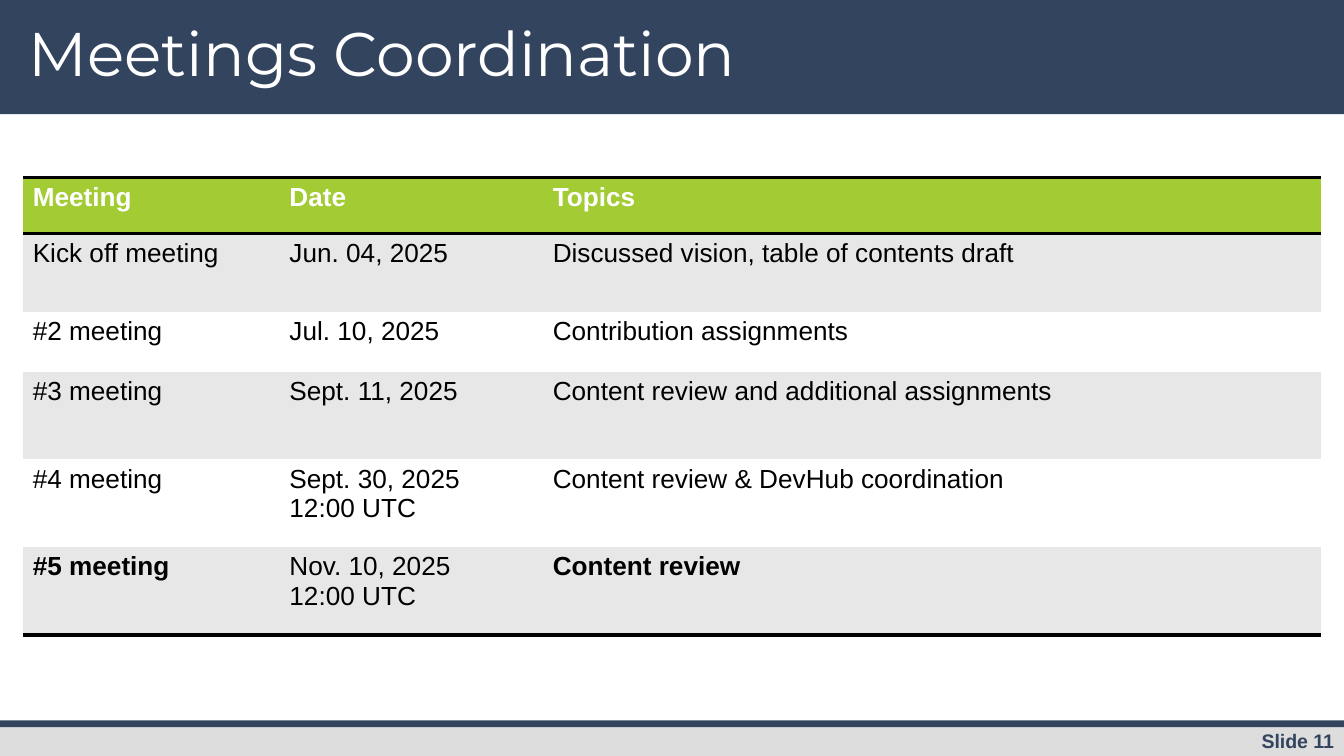
from lxml.etree import SubElement
from pptx import Presentation
from pptx.dml.color import RGBColor
from pptx.enum.shapes import MSO_SHAPE as Shape
from pptx.enum.text import MSO_ANCHOR as Anchor, PP_ALIGN as Align
from pptx.oxml import parse_xml
from pptx.oxml.ns import qn
from pptx.util import Pt

NAVY, SILVER, GREEN = "33445F", "DDDDDD", "A3CB34"
STRIPE, WHITE, BLACK = "E7E7E7", "FFFFFF", "000000"
NO_GRID_STYLE = "{2D5ABB26-0587-4C30-8999-92F81FD0307C}"
DRAWING_NS = "http://schemas.openxmlformats.org/drawingml/2006/main"
COLUMN_WIDTHS = [137.5, 141.1, 416.9]
ROW_HEIGHTS = [30, 42, 32.2, 47, 47, 47]
MEETINGS = [
    ("Meeting", "Date", "Topics"),
    ("Kick off meeting", "Jun. 04, 2025", "Discussed vision, table of contents draft"),
    ("#2 meeting", "Jul. 10, 2025", "Contribution assignments"),
    ("#3 meeting", "Sept. 11, 2025", "Content review and additional assignments"),
    ("#4 meeting", "Sept. 30, 2025\n12:00 UTC", "Content review & DevHub coordination"),
    ("#5 meeting", "Nov. 10, 2025\n12:00 UTC", "Content review"),
]


def color(value):
    return RGBColor.from_string(value)


def add_span(para, text, size, ink, bold=False, face="Arial"):
    span = para.add_run()
    span.text = text
    span.font.name = face
    span.font.size = Pt(size)
    span.font.bold = bold
    span.font.color.rgb = color(ink)


def set_insets(frame):
    frame.word_wrap = True
    frame.vertical_anchor = Anchor.TOP
    frame.margin_left = frame.margin_right = Pt(5.3)
    frame.margin_top = frame.margin_bottom = Pt(2.6)


def add_bar(page, top, height, fill):
    bar = page.shapes.add_shape(Shape.RECTANGLE, 0, Pt(top), Pt(720), Pt(height))
    bar.shadow.inherit = False
    bar.fill.solid()
    bar.fill.fore_color.rgb = color(fill)
    bar.line.fill.background()


def add_slide_number(page):
    box = page.shapes.add_textbox(Pt(606.2), Pt(388.1), Pt(113.8), Pt(18))
    set_insets(box.text_frame)
    para = box.text_frame.paragraphs[0]
    para.alignment = Align.RIGHT
    add_span(para, "Slide 11", 10.5, NAVY, bold=True)


def place_title(page, text):
    title = page.shapes.title
    title.left, title.top, title.width, title.height = Pt(10.1), Pt(10.1), Pt(554.4), Pt(46.1)
    set_insets(title.text_frame)
    para = title.text_frame.paragraphs[0]
    para.alignment = Align.LEFT
    para.line_spacing = 0.9
    add_span(para, text, 33, WHITE, face="Montserrat")
    page.shapes.element.append(title.element)


def add_border(cell, side):
    line = parse_xml(f'<a:{side} xmlns:a="{DRAWING_NS}" w="{Pt(2)}"/>')
    fill = SubElement(line, qn("a:solidFill"))
    SubElement(fill, qn("a:srgbClr"), val=BLACK)
    cell._tc.get_or_add_tcPr().insert(0, line)


def fill_cell(cell, text, fill, ink, bold):
    cell.fill.solid()
    cell.fill.fore_color.rgb = color(fill)
    cell.margin_left = cell.margin_right = Pt(5.4)
    cell.margin_top = cell.margin_bottom = Pt(2.7)
    for number, line in enumerate(text.split("\n")):
        frame = cell.text_frame
        para = frame.add_paragraph() if number else frame.paragraphs[0]
        add_span(para, line, 14, ink, bold)


def add_meeting_table(page):
    frame = page.shapes.add_table(
        len(MEETINGS), len(COLUMN_WIDTHS), Pt(12.2), Pt(95),
        Pt(sum(COLUMN_WIDTHS)), Pt(sum(ROW_HEIGHTS)),
    )
    table = frame.table
    table._tbl.tblPr.find(qn("a:tableStyleId")).text = NO_GRID_STYLE
    for column, width in zip(table.columns, COLUMN_WIDTHS):
        column.width = Pt(width)
    last = len(MEETINGS) - 1
    for row, (height, texts) in enumerate(zip(ROW_HEIGHTS, MEETINGS)):
        table.rows[row].height = Pt(height)
        fill = GREEN if row == 0 else STRIPE if row % 2 else WHITE
        ink = BLACK if row else WHITE
        for column, text in enumerate(texts):
            cell = table.cell(row, column)
            bold = row == 0 or (row == last and column != 1)
            fill_cell(cell, text, fill, ink, bold)
            if row in (0, last):
                add_border(cell, "lnB")
            if row == 0:
                add_border(cell, "lnT")


def main():
    deck = Presentation()
    deck.slide_width, deck.slide_height = Pt(720), Pt(405)
    page = deck.slides.add_slide(deck.slide_layouts[5])
    add_bar(page, 0, 61.2, NAVY)
    add_bar(page, 388.4, 16.6, SILVER)
    add_bar(page, 386, 3.6, NAVY)
    add_slide_number(page)
    place_title(page, "Meetings Coordination")
    add_meeting_table(page)
    deck.save("out.pptx")


if __name__ == "__main__":
    main()
